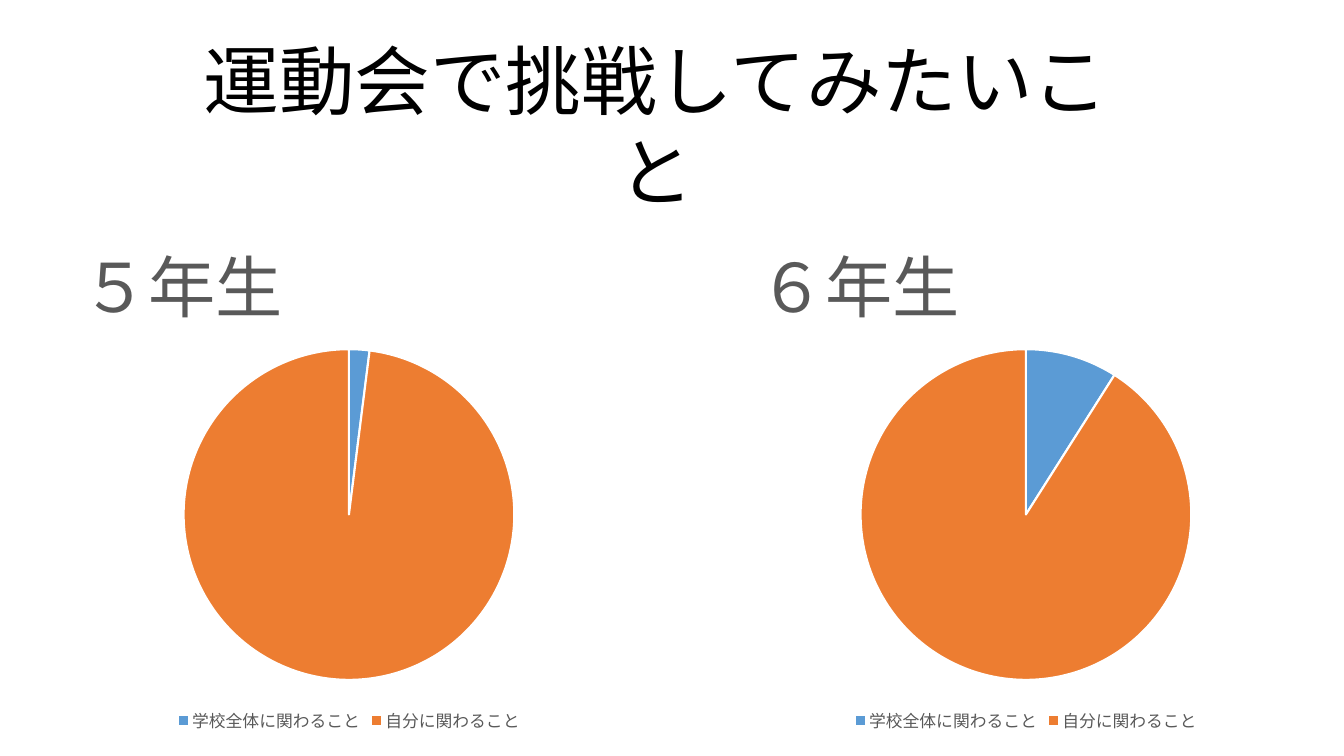
from lxml import etree
from pptx import Presentation
from pptx.chart.data import CategoryChartData
from pptx.dml.color import RGBColor
from pptx.enum.chart import XL_CHART_TYPE, XL_LEGEND_POSITION
from pptx.enum.text import MSO_AUTO_SIZE, PP_ALIGN
from pptx.oxml.ns import qn
from pptx.util import Pt

PIE = XL_CHART_TYPE.PIE
BOTTOM = XL_LEGEND_POSITION.BOTTOM
CENTER = PP_ALIGN.CENTER
GROW = MSO_AUTO_SIZE.SHAPE_TO_FIT_TEXT

FONT = "Calibri"
COLORS = {"black": "000000", "white": "FFFFFF", "gray": "595959",
          "school": "5B9BD5", "self": "ED7D31"}
EMU_PER_PX = 914400 / 100.8


def px(n):
    return round(n * EMU_PER_PX)


def place(parent, before, **fractions):
    """Give a chart part a manual layout in fractions of the chart."""
    layout = parent.find(qn("c:layout"))
    if layout is None:
        layout = etree.Element(qn("c:layout"))
        parent.find(qn(before)).addprevious(layout)
    for child in list(layout):
        layout.remove(child)
    manual = etree.SubElement(layout, qn("c:manualLayout"))
    if "w" in fractions:
        etree.SubElement(manual, qn("c:layoutTarget")).set("val", "inner")
    for axis in "xy":
        etree.SubElement(manual, qn(f"c:{axis}Mode")).set("val", "edge")
    for key, value in fractions.items():
        etree.SubElement(manual, qn(f"c:{key}")).set("val", str(value))


prs = Presentation()
prs.slide_width, prs.slide_height = px(1344), px(756)
s = prs.slides.add_slide(prs.slide_layouts[6])

# Pie charts, one per grade
CATEGORIES = ["学校全体に関わること", "自分に関わること"]
GRADES = [("５年生", 31, (2, 98)), ("６年生", 708, (9, 91))]

for grade, left, values in GRADES:
    data = CategoryChartData()
    data.categories = CATEGORIES
    data.add_series("Series 1", values)
    chart = s.shapes.add_chart(PIE, px(left), px(181), px(636), px(556), data).chart
    chart.font.name = FONT
    chart.font.size = Pt(10)
    chart.font.color.rgb = RGBColor.from_string(COLORS["black"])

    # Grade name
    chart.has_title = True
    tf = chart.chart_title.text_frame
    tf.text = grade
    font = tf.paragraphs[0].runs[0].font
    font.name, font.size, font.bold = FONT, Pt(48), False
    font.color.rgb = RGBColor.from_string(COLORS["gray"])
    chart.chart_title.include_in_layout = False
    place(chart.chart_title._element, "c:overlay", x=0.06, y=0.06)

    # Slices
    plot = chart.plots[0]
    plot.vary_by_categories = True
    place(plot._element.getparent(), "c:pieChart", x=0.24, y=0.3, w=0.52, h=0.6)
    for i, key in enumerate(("school", "self")):
        fmt = plot.series[0].points[i].format
        fmt.fill.solid()
        fmt.fill.fore_color.rgb = RGBColor.from_string(COLORS[key])
        fmt.line.color.rgb = RGBColor.from_string(COLORS["white"])
        fmt.line.width = Pt(1.5)

    # Legend
    chart.has_legend = True
    chart.legend.position = BOTTOM
    chart.legend.include_in_layout = False
    font = chart.legend.font
    font.name, font.size = FONT, Pt(12)
    font.color.rgb = RGBColor.from_string(COLORS["gray"])

# Slide title
tf = s.shapes.add_textbox(px(188), px(29), px(936), px(102)).text_frame
tf.word_wrap = True
tf.auto_size = GROW
tf.text = "運動会で挑戦してみたいこと"
p = tf.paragraphs[0]
p.alignment = CENTER
font = p.runs[0].font
font.name, font.size = FONT, Pt(54)
font.color.rgb = RGBColor.from_string(COLORS["black"])

prs.save("out.pptx")
